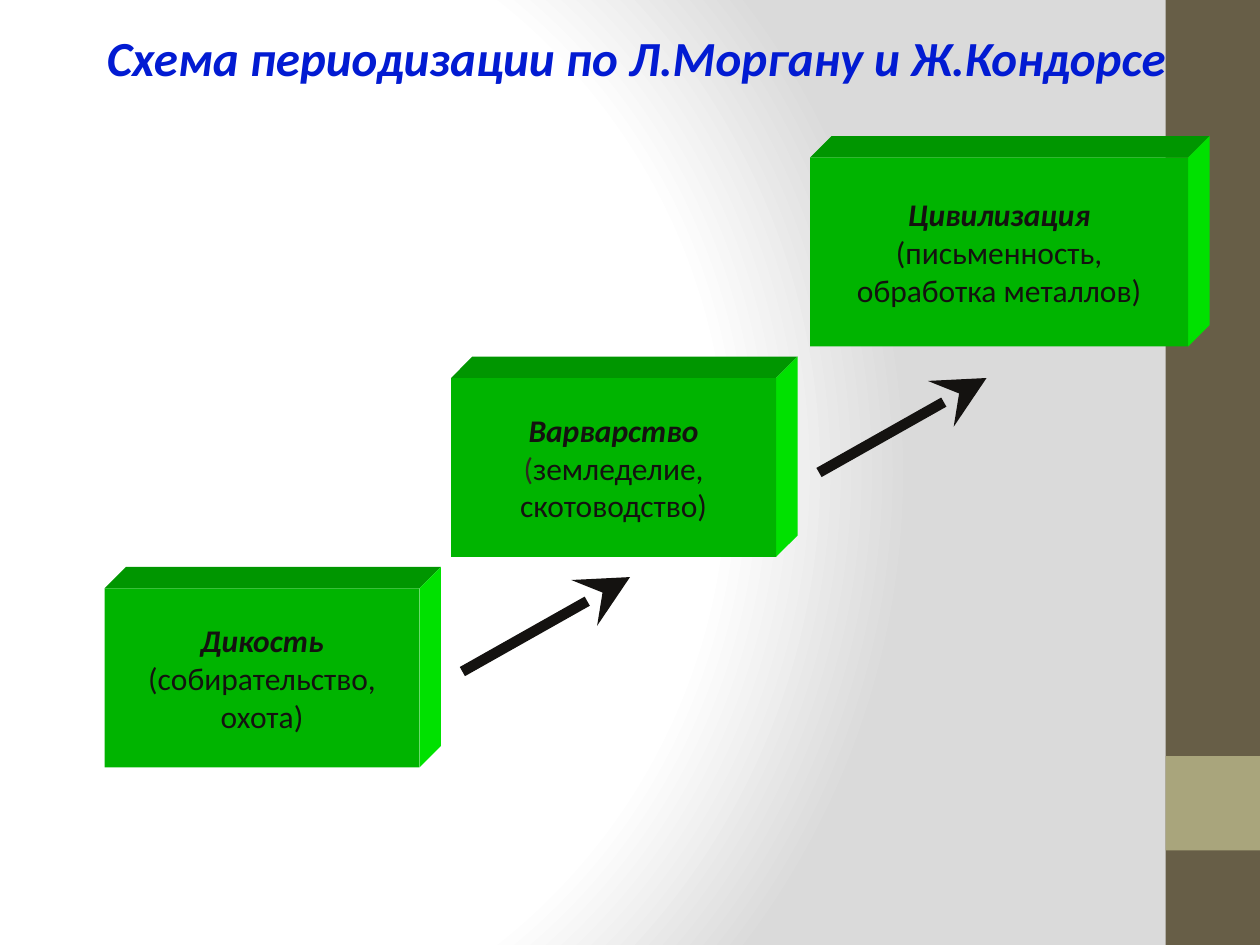
import pptx
import pptx.util
import pptx.oxml
import pptx.oxml.ns
import pptx.dml.color
import pptx.enum.shapes
import pptx.enum.text

Inches = pptx.util.Inches
Pt = pptx.util.Pt

# Content
TITLE = "Схема периодизации по Л.Моргану и Ж.Кондорсе"
# Each stage: left, top, width, height, name, lines of runs (text, colour)
STAGES = [
    (0.83, 4.67, 2.5, 1.42, "Дикость",
     [[("(собирательство,", "ink")], [("охота)", "ink")]]),
    (3.58, 3, 2.58, 1.42, "Варварство",
     [[("(", "soft"), ("земледелие,", "ink")], [("скотоводство)", "ink")]]),
    (6.43, 1.25, 3, 1.5, "Цивилизация",
     [[("(письменность,", "ink")], [("обработка металлов)", "ink")]]),
]
ARROWS = [(3.67, 5.33), (6.5, 3.75)]
RUN, RISE = 1.33, 0.75  # reach of each arrow
DEPTH = 0.17            # depth of each block

THEME = {
    "font": "Calibri", "title": 28, "body": 18, "line": 6,
    "blue": "021BD2", "ink": "141210", "soft": "2F2B20",
    "front": "00B400", "top": "009600", "side": "00E100",
    "band": "675E47", "accent": "A9A57C",
    "inner": "FFFFFF", "outer": "DADADA",
}


def tint(name):
    return pptx.dml.color.RGBColor.from_string(THEME[name])


def paint(shape, name):
    shape.shadow.inherit = False
    shape.fill.solid()
    shape.fill.fore_color.rgb = tint(name)
    shape.line.fill.background()


def box(slide, left, top, width, height, name):
    kind = pptx.enum.shapes.MSO_SHAPE.RECTANGLE
    shape = slide.shapes.add_shape(
        kind, Inches(left), Inches(top), Inches(width), Inches(height))
    paint(shape, name)
    return shape


def face(slide, points, name):
    spots = [(Inches(x), Inches(y)) for x, y in points]
    build = slide.shapes.build_freeform(*spots[0])
    build.add_line_segments(spots[1:], close=True)
    paint(build.convert_to_shape(), name)


def style(font, size, bold):
    font.name = THEME["font"]
    font.size = Pt(THEME[size])
    font.bold = font.italic = bold


def block(slide, left, top, width, height, name, lines):
    right, base = left + width, top + height
    back, high = right + DEPTH, top - DEPTH
    face(slide, [(left, top), (left + DEPTH, high), (back, high), (right, top)], "top")
    face(slide, [(right, top), (back, high), (back, base - DEPTH), (right, base)], "side")
    frame = box(slide, left, top, width, height, "front").text_frame
    frame.word_wrap = False
    frame.vertical_anchor = pptx.enum.text.MSO_ANCHOR.MIDDLE
    for i, runs in enumerate([[(name, "ink")]] + lines):
        para = frame.add_paragraph() if i else frame.paragraphs[0]
        para.alignment = pptx.enum.text.PP_ALIGN.CENTER
        style(para.font, "body", i == 0)
        for text, shade in runs:
            run = para.add_run()
            run.text = text
            run.font.color.rgb = tint(shade)


def arrow(slide, x, y):
    kind = pptx.enum.shapes.MSO_CONNECTOR.STRAIGHT
    line = slide.shapes.add_connector(
        kind, Inches(x), Inches(y), Inches(x + RUN), Inches(y - RISE))
    line.line.color.rgb = tint("ink")
    line.line.width = Pt(THEME["line"])
    space = pptx.oxml.ns.nsdecls("a")
    head = f'<a:tailEnd {space} type="stealth" w="lg" len="lg"/>'
    line.line._get_or_add_ln().append(pptx.oxml.parse_xml(head))
    line._element.spPr.append(pptx.oxml.parse_xml(f"<a:effectLst {space}/>"))


def backdrop(slide):
    slide.background.fill.solid()
    solid = slide.element.find(".//" + pptx.oxml.ns.qn("p:bgPr"))[0]
    stops = "".join(
        f'<a:gs pos="{pos}000"><a:srgbClr val="{THEME[name]}"/></a:gs>'
        for pos, name in [(0, "inner"), (75, "inner"), (100, "outer")])
    grad = pptx.oxml.parse_xml(
        f'<a:gradFill {pptx.oxml.ns.nsdecls("a")} rotWithShape="1">'
        f'<a:gsLst>{stops}</a:gsLst><a:path path="circle">'
        '<a:fillToRect l="20000" t="50000" r="100000" b="50000"/>'
        "</a:path></a:gradFill>")
    solid.getparent().replace(solid, grad)


def main():
    deck = pptx.Presentation()
    deck.slide_width, deck.slide_height = Inches(10), Inches(7.5)
    slide = deck.slides.add_slide(deck.slide_layouts[6])

    # Background and side band
    backdrop(slide)
    box(slide, 9.25, 0, 0.75, 7.5, "band")
    box(slide, 9.25, 6, 0.75, 0.75, "accent")

    # Title
    frame = slide.shapes.add_textbox(
        Inches(0.75), Inches(0.17), Inches(8.68), Inches(0.57)).text_frame
    frame.word_wrap = False
    para = frame.paragraphs[0]
    para.text = TITLE
    style(para.font, "title", True)
    para.font.color.rgb = tint("blue")

    # Steps and the arrows between them
    for stage in STAGES:
        block(slide, *stage)
    for spot in ARROWS:
        arrow(slide, *spot)

    deck.save("out.pptx")


if __name__ == "__main__":
    main()
